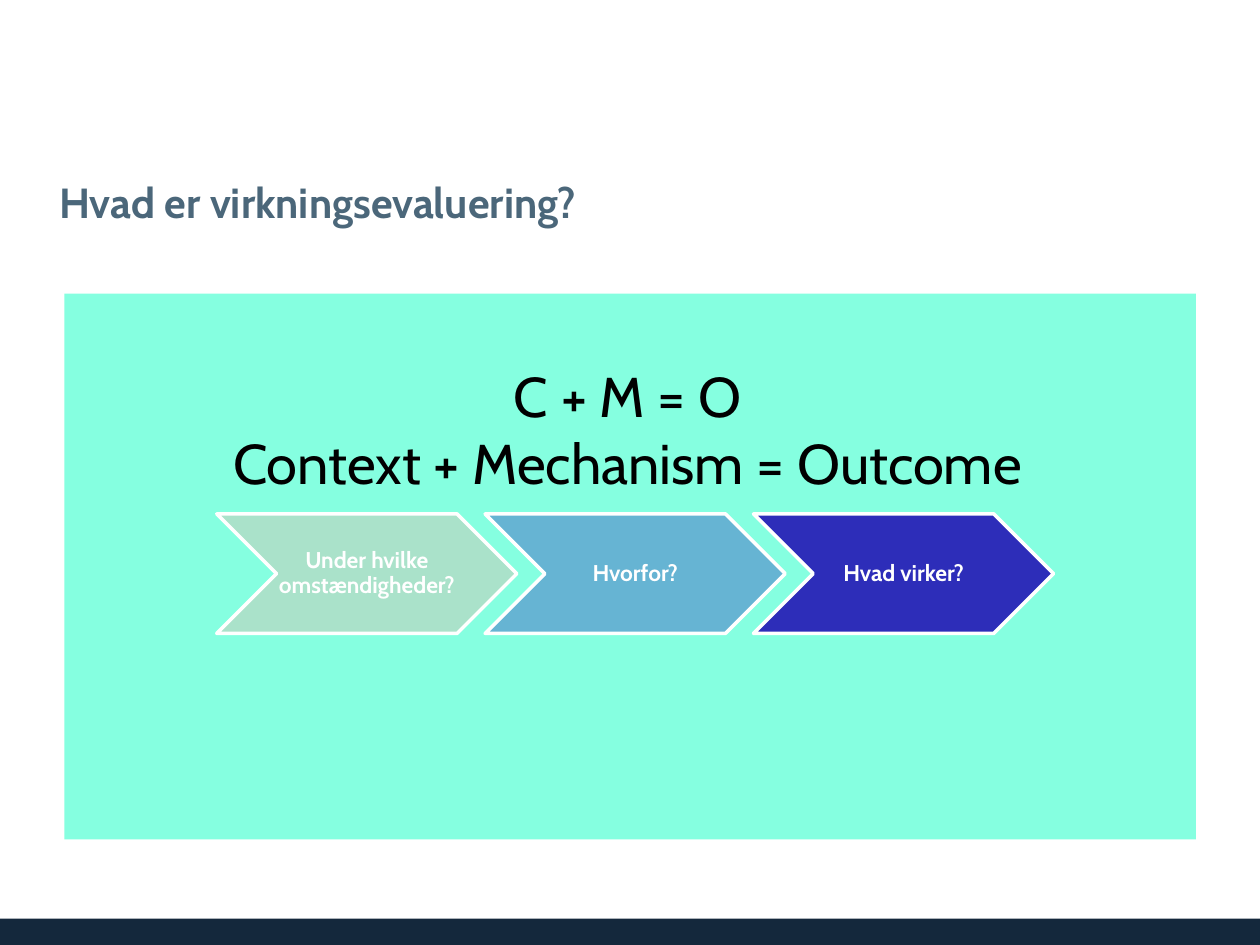
from dataclasses import dataclass

from pptx import Presentation
from pptx.dml.color import RGBColor
from pptx.enum.shapes import MSO_SHAPE as Preset
from pptx.enum.text import MSO_ANCHOR as Anchor, MSO_AUTO_SIZE as AutoSize, PP_ALIGN as Align
from pptx.oxml.xmlchemy import OxmlElement
from pptx.util import Cm, Pt


@dataclass(frozen=True)
class Theme:
    font: str = "Cabin"
    title_size: int = 24
    body_size: int = 32
    step_size: int = 13
    title: str = "4B677A"
    text: str = "000000"
    white: str = "FFFFFF"
    panel: str = "85FFE0"
    footer: str = "14283C"


THEME = Theme()
FORMULA = ["C + M = O", "Context + Mechanism = Outcome"]
STEPS = [
    ("Under hvilke omstændigheder?", "AAE2CA"),
    ("Hvorfor?", "66B4D3"),
    ("Hvad virker?", "2D2DB9"),
]
STEP_LEFT, STEP_TOP, STEP_WIDTH, STEP_HEIGHT, STEP_PITCH = 4.37, 10.36, 6.05, 2.41, 5.41


def set_attributes(target, values):
    for name, value in values.items():
        setattr(target, name, value)


def place(shape, left, top, width, height):
    set_attributes(shape, {"left": Cm(left), "top": Cm(top),
                           "width": Cm(width), "height": Cm(height)})


def fill(shape, color):
    shape.fill.solid()
    shape.fill.fore_color.rgb = RGBColor.from_string(color)


def set_frame(shape, anchor, left=0, top=0, right=0, bottom=0):
    set_attributes(shape.text_frame, {
        "word_wrap": True, "auto_size": AutoSize.NONE, "vertical_anchor": anchor,
        "margin_left": Cm(left), "margin_top": Cm(top),
        "margin_right": Cm(right), "margin_bottom": Cm(bottom)})


def format_paragraph(paragraph, size, color, bold=False, align=Align.CENTER, spacing=1.0):
    set_attributes(paragraph, {"alignment": align, "line_spacing": spacing,
                               "space_before": Pt(0)})
    set_attributes(paragraph.font, {"name": THEME.font, "size": Pt(size), "bold": bold})
    paragraph.font.color.rgb = RGBColor.from_string(color)


def remove_bullet(paragraph):
    properties = paragraph._p.get_or_add_pPr()
    properties.set("marL", "0")
    properties.set("indent", "0")
    properties.append(OxmlElement("a:buNone"))


def add_footer_bar(slide):
    bar = slide.shapes.add_shape(Preset.RECTANGLE, 0, Cm(18.52), Cm(25.4), Cm(0.53))
    bar.shadow.inherit = False
    fill(bar, THEME.footer)
    bar.line.fill.background()


def write_title(title, text):
    place(title, 1.09, 3.12, 22.83, 1.9)
    set_frame(title, Anchor.MIDDLE, 0.1, 0.13, 0.2, 0.13)
    title.text_frame.text = text
    format_paragraph(title.text_frame.paragraphs[0], THEME.title_size, THEME.title,
                     bold=True, align=Align.LEFT)


def write_formula(body, lines):
    place(body, 1.3, 5.92, 22.81, 11)
    fill(body, THEME.panel)
    set_frame(body, Anchor.TOP, 0.1, 1.37, 0.2, 0.13)
    body.text_frame.text = "\n".join(lines)
    for paragraph in body.text_frame.paragraphs:
        remove_bullet(paragraph)
        format_paragraph(paragraph, THEME.body_size, THEME.text)


def add_step(slide, index, text, color):
    step = slide.shapes.add_shape(
        Preset.CHEVRON, Cm(STEP_LEFT + index * STEP_PITCH), Cm(STEP_TOP),
        Cm(STEP_WIDTH), Cm(STEP_HEIGHT))
    step.shadow.inherit = False
    fill(step, color)
    step.line.color.rgb = RGBColor.from_string(THEME.white)
    step.line.width = Pt(2)
    set_frame(step, Anchor.MIDDLE)
    step.text_frame.text = text
    format_paragraph(step.text_frame.paragraphs[0], THEME.step_size, THEME.white,
                     bold=True, spacing=0.9)


def main():
    presentation = Presentation()
    set_attributes(presentation, {"slide_width": Cm(25.4), "slide_height": Cm(19.05)})
    slide = presentation.slides.add_slide(presentation.slide_layouts[1])
    add_footer_bar(slide)
    write_title(slide.shapes.title, "Hvad er virkningsevaluering?")
    write_formula(slide.placeholders[1], FORMULA)
    for index, (text, color) in enumerate(STEPS):
        add_step(slide, index, text, color)
    presentation.save("out.pptx")


if __name__ == "__main__":
    main()
